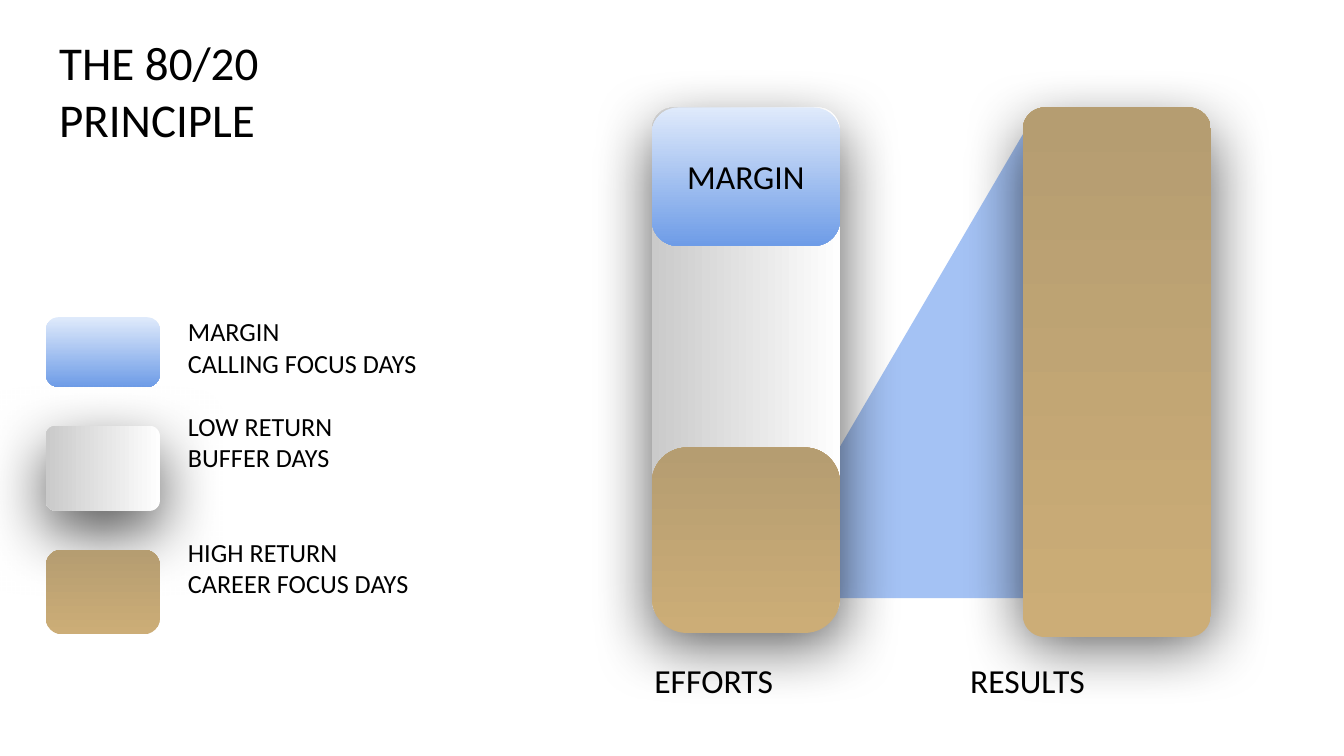
import pptx
import pptx.dml.color
import pptx.enum.shapes
import pptx.enum.text
import pptx.oxml
import pptx.oxml.ns
import pptx.util

Inches = pptx.util.Inches
Pt = pptx.util.Pt
Align = pptx.enum.text.PP_ALIGN

STYLES = {
    "margin": {"colors": ("DFEAFB", "6E9CE7"), "angle": 270, "corner": 0.19},
    "low": {"colors": ("FEFEFE", "CACACA"), "angle": 180, "corner": 0.118, "shadow": True},
    "results back": {"colors": ("FEFEFE", "DDDDDD"), "angle": 180, "corner": 0.118, "shadow": True},
    "high": {"colors": ("CCAD77", "B59D71"), "angle": 90, "corner": 0.19},
    "results": {"colors": ("CCAD77", "B59D71"), "angle": 90, "corner": 0.118},
}
EFFORTS_LEFT, RESULTS_LEFT, BAR_TOP, BAR_WIDTH = 4.85, 7.61, 0.8, 1.4
BARS = [
    ("results back", RESULTS_LEFT, BAR_TOP, 3.83),
    ("low", EFFORTS_LEFT, BAR_TOP, 3.83),
    ("high", EFFORTS_LEFT, 3.33, 1.38),
    ("results", RESULTS_LEFT, BAR_TOP, 3.94),
    ("margin", EFFORTS_LEFT, BAR_TOP, 1.03),
]
SWATCHES = [("margin", 2.36, 0.52), ("low", 3.17, 0.63), ("high", 4.09, 0.63)]
WEDGE = [(7.61, 1), (7.61, 4.45), (5.59, 4.45)]
TITLE = ["THE 80/20", "PRINCIPLE"]
LEGEND = ["MARGIN", "CALLING FOCUS DAYS", "LOW RETURN", "BUFFER DAYS",
          "HIGH RETURN", "CAREER FOCUS DAYS"]
LEGEND_GAPS = {2: 17, 4: 34}
BAR_LABELS = ["EFFORTS\tRESULTS"]
MARGIN_LABEL = ["MARGIN"]


def rgb(value):
    """Turn a hex string into a colour."""
    return pptx.dml.color.RGBColor.from_string(value)


def add_tab_stop(para, position):
    """Set one left tab stop at a position in inches."""
    para._p.get_or_add_pPr().append(pptx.oxml.parse_xml(
        f'<a:tabLst {pptx.oxml.ns.nsdecls("a")}>'
        f'<a:tab pos="{Inches(position)}" algn="l"/></a:tabLst>'))


def write(box, lines, size, align=Align.LEFT, gaps=None, tab=None, color="000000"):
    """Fill a box with one paragraph per line."""
    frame = box.text_frame
    frame.word_wrap = True
    frame.auto_size = pptx.enum.text.MSO_AUTO_SIZE.NONE
    frame.vertical_anchor = pptx.enum.text.MSO_ANCHOR.TOP
    frame.margin_left = frame.margin_right = Inches(0.1)
    frame.margin_top = frame.margin_bottom = Inches(0.1)
    for index, line in enumerate(lines):
        para = frame.paragraphs[0] if index == 0 else frame.add_paragraph()
        para.alignment = align
        para.space_before = Pt((gaps or {}).get(index, 0))
        if tab:
            add_tab_stop(para, tab)
        span = para.add_run()
        span.text = line
        span.font.name = "Calibri"
        span.font.size = Pt(size)
        span.font.color.rgb = rgb(color)


def add_text(page, lines, place, size, **options):
    """Add a text box at a place given in inches."""
    box = page.shapes.add_textbox(*map(Inches, place))
    write(box, lines, size, **options)


def add_shadow(shape):
    """Give a shape a soft shadow below it."""
    effects = shape._element.spPr.find(pptx.oxml.ns.qn("a:effectLst"))
    effects.append(pptx.oxml.parse_xml(
        f'<a:outerShdw {pptx.oxml.ns.nsdecls("a")} blurRad="{Pt(34)}" dist="{Pt(12)}" '
        'dir="5400000" algn="ctr" rotWithShape="0"><a:srgbClr val="000000">'
        '<a:alpha val="66000"/></a:srgbClr></a:outerShdw>'))


def add_block(page, place, colors, angle, corner, shadow=False):
    """Add a rounded block with a gradient fill."""
    block = page.shapes.add_shape(
        pptx.enum.shapes.MSO_SHAPE.ROUNDED_RECTANGLE, *map(Inches, place))
    block.adjustments[0] = corner
    block.fill.gradient()
    block.fill.gradient_angle = angle
    for stop, color in zip(block.fill.gradient_stops, colors):
        stop.color.rgb = rgb(color)
    block.line.fill.background()
    block.shadow.inherit = False
    if shadow:
        add_shadow(block)


def add_wedge(page):
    """Add the wedge that links efforts to results."""
    points = [(Inches(x), Inches(y)) for x, y in WEDGE]
    builder = page.shapes.build_freeform(*points[0])
    builder.add_line_segments(points[1:], close=True)
    wedge = builder.convert_to_shape()
    wedge.fill.solid()
    wedge.fill.fore_color.rgb = rgb("A4C2F4")
    wedge.line.fill.background()
    wedge.shadow.inherit = False


def main():
    """Build the slide and save it."""
    deck = pptx.Presentation()
    deck.slide_width = Inches(10)
    deck.slide_height = deck.slide_width * 9 // 16
    page = deck.slides.add_slide(deck.slide_layouts[5])
    title = page.shapes.title
    title.left, title.top, title.width, title.height = map(Inches, (0.34, 0.15, 9.32, 0.63))
    write(title, TITLE, 25.2)
    add_wedge(page)
    for style, left, top, height in BARS:
        add_block(page, (left, top, BAR_WIDTH, height), **STYLES[style])
    for style, top, height in SWATCHES:
        add_block(page, (0.34, top, 0.85, height), **STYLES[style])
    add_text(page, BAR_LABELS, (4.77, 4.81, 5.05, 0.5), 18, tab=2.35)
    add_text(page, LEGEND, (1.3, 2.25, 2.35, 2.56), 14, gaps=LEGEND_GAPS)
    add_text(page, MARGIN_LABEL, (EFFORTS_LEFT, 1.06, BAR_WIDTH, 0.5), 18, align=Align.CENTER)
    deck.save("out.pptx")


if __name__ == "__main__":
    main()
